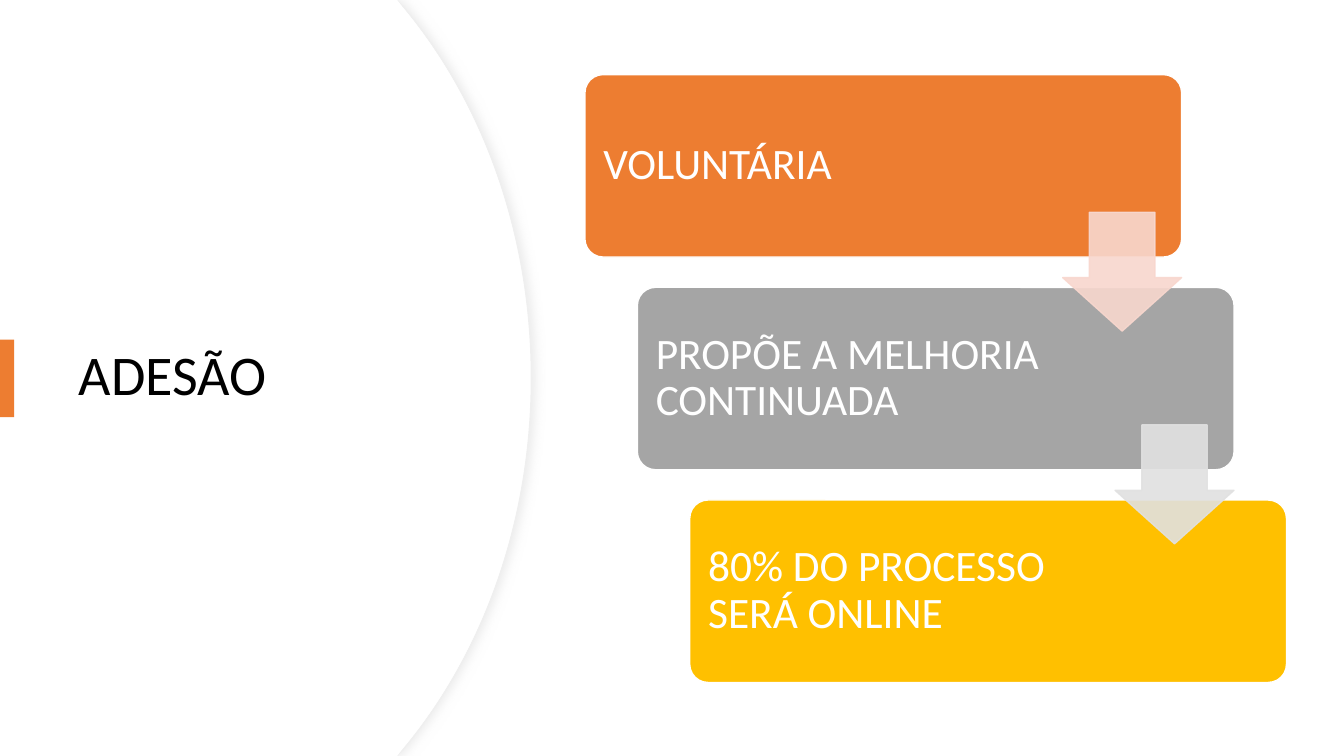
from dataclasses import dataclass

from lxml.etree import SubElement
from pptx import Presentation
from pptx.dml.color import RGBColor
from pptx.enum.shapes import MSO_SHAPE as Preset
from pptx.enum.text import MSO_ANCHOR as Anchor, MSO_AUTO_SIZE as AutoSize, PP_ALIGN as Align
from pptx.oxml.ns import qn
from pptx.util import Inches, Pt

WIDTH, HEIGHT = Inches(13.33), Inches(7.5)
COLUMN, ROW = WIDTH / 100, HEIGHT / 100
FONT = "Calibri"
COLORS = {
    "white": "FFFFFF", "black": "000000", "edge": "EFEFEF", "shadow": "D9D9D9",
    "orange": "ED7D31", "gray": "A5A5A5", "gold": "FFC000",
    "pale_orange": "F8D7CE", "pale_gray": "E1E1E1",
}
CARDS = [
    ("VOLUNTÁRIA", "orange", 29.7),
    ("PROPÕE A MELHORIA CONTINUADA", "gray", 30.83),
    ("80% DO PROCESSO SERÁ ONLINE", "gold", 30.83),
]
ARROW_COLORS = ["pale_orange", "pale_gray"]


@dataclass
class Box:
    left: float
    top: float
    width: float
    height: float

    def emu(self):
        return (round(self.left * COLUMN), round(self.top * ROW),
                round(self.width * COLUMN), round(self.height * ROW))


def rgb(name):
    return RGBColor.from_string(COLORS[name])


def paint(shape, fill, line=None, weight=1):
    shape.shadow.inherit = False
    shape.fill.solid()
    shape.fill.fore_color.rgb = rgb(fill)
    if line:
        shape.line.color.rgb = rgb(line)
        shape.line.width = Pt(weight)
    else:
        shape.line.fill.background()


def add_preset(shapes, preset, box, adjustments=(), **colors):
    shape = shapes.add_shape(preset, *box.emu())
    for index, value in enumerate(adjustments):
        shape.adjustments[index] = value
    paint(shape, **colors)
    return shape


def write(frame, text, size, color, **frame_format):
    frame_format = {"word_wrap": True, "auto_size": AutoSize.NONE,
                    "vertical_anchor": Anchor.MIDDLE, **frame_format}
    for name, value in frame_format.items():
        setattr(frame, name, value)
    para = frame.paragraphs[0]
    para.alignment = Align.LEFT
    para.line_spacing = 0.9
    span = para.add_run()
    span.text = text
    for name, value in {"name": FONT, "size": Pt(size)}.items():
        setattr(span.font, name, value)
    span.font.color.rgb = rgb(color)


def curve_segments(shape, first, count):
    lines = list(shape._element.iter(qn("a:lnTo")))
    for start in range(first, first + 3 * count, 3):
        curve, *others = lines[start:start + 3]
        curve.tag = qn("a:cubicBezTo")
        for other in others:
            curve.append(other[0])
            other.getparent().remove(other)


def add_panel(slide, box, **colors):
    right, bottom = box.left + box.width, box.top + box.height
    middle = box.top + box.height / 2
    upper = [(29.55, box.top), (right - 9.45, box.top + 1.07),
             (right - 3.6, box.top + 13.6), (right, box.top + 30.93)]
    lower = [(x, 2 * middle - y) for x, y in reversed(upper)]
    outline = upper + [(right, middle)] + lower + [(box.left, bottom)]
    builder = slide.shapes.build_freeform(box.left * COLUMN, box.top * ROW)
    builder.add_line_segments([(x * COLUMN, y * ROW) for x, y in outline], close=True)
    panel = builder.convert_to_shape()
    curve_segments(panel, first=2, count=2)
    paint(panel, **colors)
    return panel


def add_soft_shadow(shape):
    effects = shape._element.spPr.find(qn("a:effectLst"))
    shadow = SubElement(effects, qn("a:outerShdw"), blurRad=str(Pt(7)),
                        dist=str(Pt(3)), dir="0", algn="l", rotWithShape="0")
    color = SubElement(shadow, qn("a:srgbClr"), val=COLORS["shadow"])
    SubElement(color, qn("a:alpha"), val="50000")


def add_title_side(slide, box):
    panel = add_panel(slide, box, fill="white", line="edge", weight=0.75)
    add_soft_shadow(panel)
    add_panel(slide, Box(box.left, box.top, box.width - 0.08, box.height), fill="white")
    title = slide.shapes.title
    panel._element.getparent().append(title._element)
    place = Box(box.left + 5.1, box.top + 16.93, 29.55, 66).emu()
    for name, value in zip(("left", "top", "width", "height"), place):
        setattr(title, name, value)
    write(title.text_frame, "ADESÃO", 40, "black")
    add_preset(slide.shapes, Preset.RECTANGLE,
               Box(box.left, box.top + 44.93, 1.05, 10.27), fill="orange")


def add_card(shapes, box, text, color, text_width):
    add_preset(shapes, Preset.ROUNDED_RECTANGLE, box, [0.1], fill=color, line="white")
    inset_x, inset_y = 0.4, 0.7
    label = shapes.add_textbox(*Box(box.left + inset_x, box.top + inset_y, text_width,
                                    box.height - 2 * inset_y).emu())
    margins = {f"margin_{side}": Inches(0.13) for side in ("left", "top", "right", "bottom")}
    write(label.text_frame, text, 31, "white", **margins)


def add_arrow(shapes, card, color):
    width, height = 8.85, 15.73
    box = Box(card.left + card.width - width, card.top + 18.2, width, height)
    arrow = add_preset(shapes, Preset.DOWN_ARROW, box, [0.55, 0.45], fill=color, line=color)
    for tint in arrow._element.spPr.iter(qn("a:srgbClr")):
        SubElement(tint, qn("a:alpha"), val="90000")


def add_cascade(slide, box):
    shapes = slide.shapes.add_group_shape().shapes
    width, height = 44.4, 24.13
    gaps = len(CARDS) - 1
    step_x, step_y = (box.width - width) / gaps, (box.height - height) / gaps
    places = [Box(box.left + index * step_x, box.top + index * step_y, width, height)
              for index in range(len(CARDS))]
    for place, card in zip(places, CARDS):
        add_card(shapes, place, *card)
    for place, color in zip(places, ARROW_COLORS):
        add_arrow(shapes, place, color)


def main():
    deck = Presentation()
    deck.slide_width, deck.slide_height = WIDTH, HEIGHT
    page = deck.slides.add_slide(deck.slide_layouts[5])
    add_title_side(page, Box(0, 0, 39.53, 100))
    add_cascade(page, Box(43.52, 9.87, 52.2, 80.4))
    deck.save("out.pptx")


if __name__ == "__main__":
    main()
